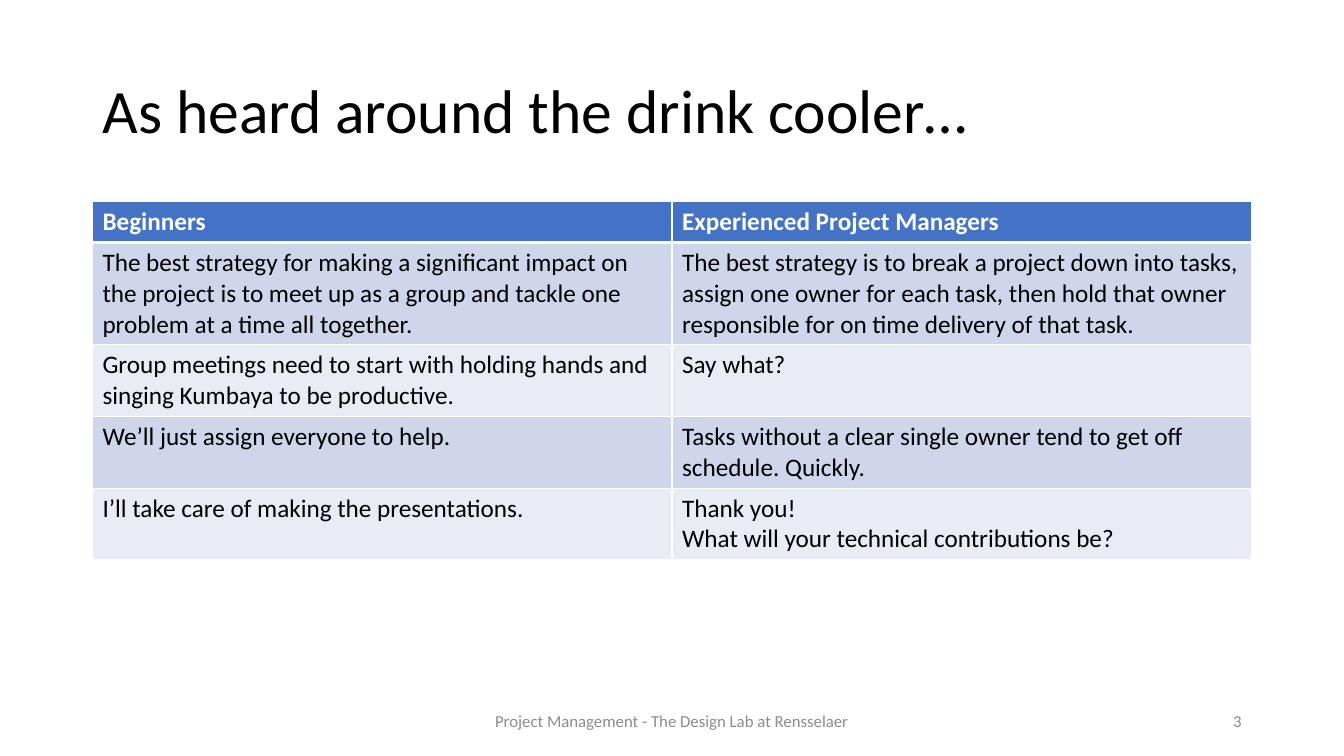
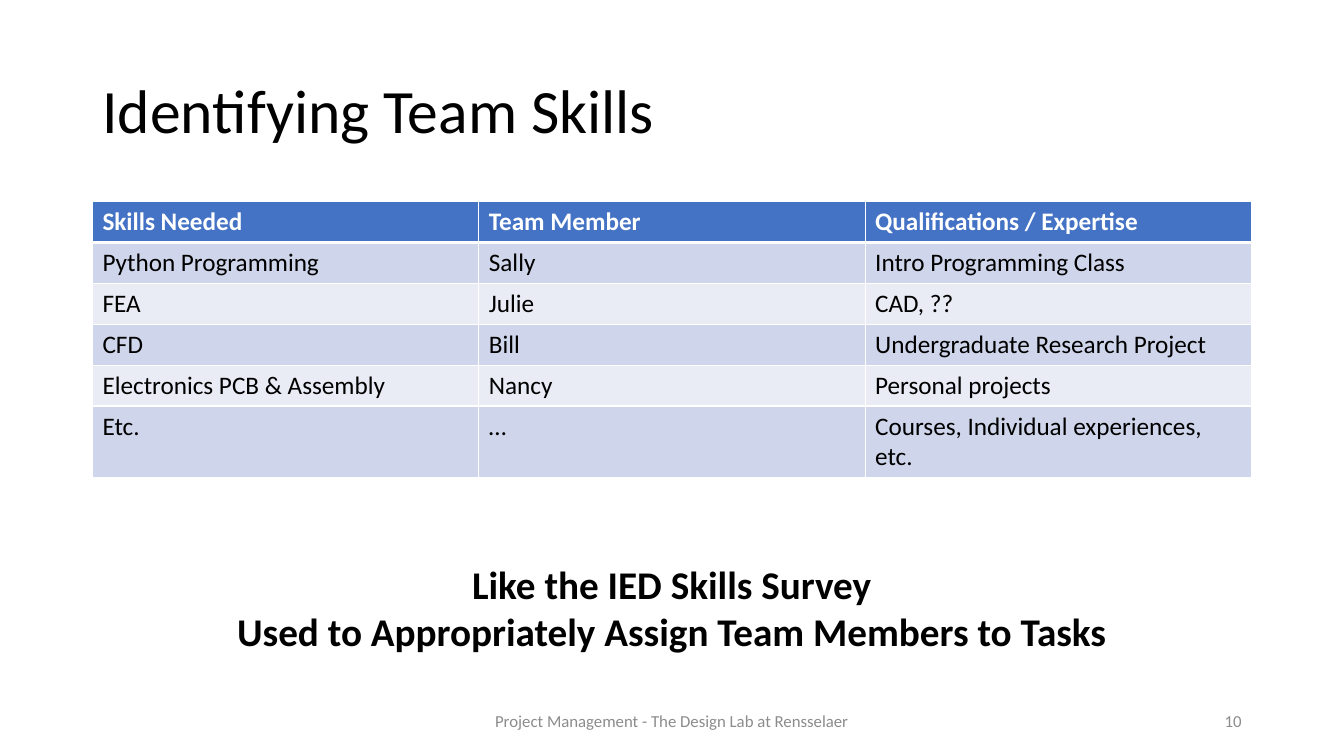
from lxml.etree import SubElement
from pptx import Presentation
from pptx.dml.color import RGBColor
from pptx.enum.text import MSO_ANCHOR, MSO_AUTO_SIZE, PP_ALIGN
from pptx.oxml.ns import qn
from pptx.util import Cm, Pt

BLACK = RGBColor(0x00, 0x00, 0x00)
WHITE = RGBColor(0xFF, 0xFF, 0xFF)
GREY = RGBColor(0x8C, 0x8C, 0x8C)
HEADER = RGBColor(0x44, 0x72, 0xC4)
BANDS = (RGBColor(0xCF, 0xD5, 0xEA), RGBColor(0xE9, 0xEB, 0xF5))
FONT = "Calibri"
LEFT, WIDTH, ROW_HEIGHT = 2.33, 29.21, 1.03
FOOTER = "Project Management - The Design Lab at Rensselaer"

SLIDES = [
    {
        "title": "As heard around the drink cooler…",
        "number": 3,
        "rows": [
            ("Beginners", "Experienced Project Managers"),
            ("The best strategy for making a significant impact on the project is to "
             "meet up as a group and tackle one problem at a time all together.",
             "The best strategy is to break a project down into tasks, assign one owner "
             "for each task, then hold that owner responsible for on time delivery of "
             "that task."),
            ("Group meetings need to start with holding hands and singing Kumbaya to be "
             "productive.", "Say what?"),
            ("We’ll just assign everyone to help.",
             "Tasks without a clear single owner tend to get off schedule. Quickly."),
            ("I’ll take care of making the presentations.",
             "Thank you!\nWhat will your technical contributions be?"),
        ],
    },
    {
        "title": "Identifying Team Skills",
        "number": 10,
        "rows": [
            ("Skills Needed", "Team Member", "Qualifications / Expertise"),
            ("Python Programming", "Sally", "Intro Programming Class"),
            ("FEA", "Julie", "CAD, ??"),
            ("CFD", "Bill", "Undergraduate Research Project"),
            ("Electronics PCB & Assembly", "Nancy", "Personal projects"),
            ("Etc.", "…", "Courses, Individual experiences, etc."),
        ],
        "caption": "Like the IED Skills Survey\n"
                   "Used to Appropriately Assign Team Members to Tasks",
    },
]


def write(tf, text, size=18, color=BLACK, bold=False, align=PP_ALIGN.LEFT, spacing=None):
    for i, line in enumerate(text.split("\n")):
        p = tf.add_paragraph() if i else tf.paragraphs[0]
        p.alignment = align
        p.line_spacing = spacing
        r = p.add_run()
        r.text = line
        r.font.name, r.font.size, r.font.bold = FONT, Pt(size), bold
        r.font.color.rgb = color


def add_text(s, box, text, anchor=MSO_ANCHOR.MIDDLE, wrap=True, **fmt):
    tf = s.shapes.add_textbox(*map(Cm, box)).text_frame
    tf.word_wrap = wrap
    tf.vertical_anchor = anchor
    write(tf, text, **fmt)


def add_title(s, text):
    sp = s.shapes.title
    sp.left, sp.top, sp.width, sp.height = Cm(LEFT), Cm(1.01), Cm(WIDTH), Cm(3.68)
    tf = sp.text_frame
    tf.auto_size = MSO_AUTO_SIZE.NONE
    tf.vertical_anchor = MSO_ANCHOR.MIDDLE
    write(tf, text, size=44, spacing=0.9)


def set_borders(cell, top, bottom):
    tc_pr = cell._tc.get_or_add_tcPr()
    for side, points in (("L", 1), ("R", 1), ("T", top), ("B", bottom)):
        ln = SubElement(tc_pr, qn(f"a:ln{side}"), w=str(Pt(points)))
        SubElement(SubElement(ln, qn("a:solidFill")), qn("a:srgbClr"), val=str(WHITE))


def add_table(s, rows):
    cols = len(rows[0])
    frame = s.shapes.add_table(len(rows), cols, Cm(LEFT), Cm(5.08),
                               Cm(WIDTH), Cm(ROW_HEIGHT * len(rows)))
    table = frame.table
    for column in table.columns:
        column.width = Cm(WIDTH / cols)
    for i, row in enumerate(rows):
        head = i == 0
        for j, text in enumerate(row):
            cell = table.cell(i, j)
            set_borders(cell, top=3 if i == 1 else 1, bottom=3 if head else 1)
            cell.fill.solid()
            cell.fill.fore_color.rgb = HEADER if head else BANDS[(i - 1) % 2]
            write(cell.text_frame, text, color=WHITE if head else BLACK, bold=head)


def add_footer(s, number):
    add_text(s, (11.22, 17.65, 11.43, 1.01), FOOTER,
             size=12, color=GREY, align=PP_ALIGN.CENTER)
    add_text(s, (23.92, 17.65, 7.62, 1.01), str(number),
             size=12, color=GREY, align=PP_ALIGN.RIGHT)


def main():
    prs = Presentation()
    prs.slide_width, prs.slide_height = Cm(33.87), Cm(19.05)
    for content in SLIDES:
        s = prs.slides.add_slide(prs.slide_layouts[5])
        add_title(s, content["title"])
        add_table(s, content["rows"])
        if "caption" in content:
            add_text(s, (5.6, 14, 22.65, 2.65), content["caption"], wrap=False,
                     anchor=MSO_ANCHOR.TOP, size=28, bold=True, align=PP_ALIGN.CENTER)
        add_footer(s, content["number"])
    prs.save("out.pptx")


if __name__ == "__main__":
    main()
